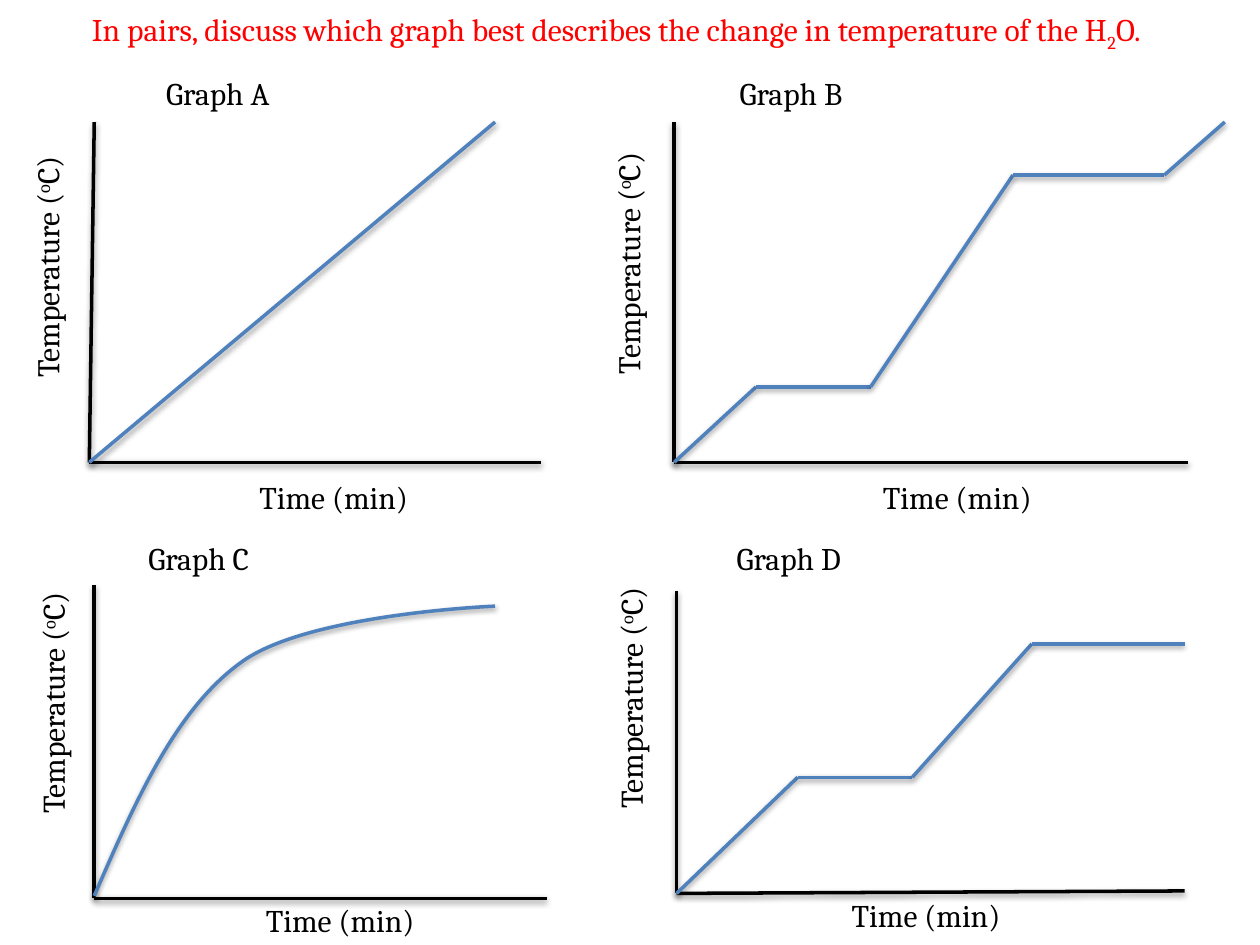
from lxml import etree
from pptx import Presentation
from pptx.dml.color import RGBColor
from pptx.enum import shapes, text
from pptx.oxml.ns import qn
from pptx.util import Cm, Pt

BLACK, RED, BLUE = "000000", "FF0000", "4F81BD"


def write(box, parts, color=BLACK):
    """Fill a box with (text, baseline percent) parts."""
    frame = box.text_frame
    look = {"word_wrap": True, "vertical_anchor": text.MSO_ANCHOR.TOP,
            "auto_size": text.MSO_AUTO_SIZE.SHAPE_TO_FIT_TEXT}
    for key, value in look.items():
        setattr(frame, key, value)
    para = frame.paragraphs[0]
    para.alignment = text.PP_ALIGN.LEFT
    for words, base in parts:
        run = para.add_run()
        run.text = words
        for key, value in {"size": Pt(18), "name": "Cambria"}.items():
            setattr(run.font, key, value)
        run.font.color.rgb = RGBColor.from_string(color)
        if base:
            run._r.get_or_add_rPr().set("baseline", str(base * 1000))


def draw(points, color):
    """Join the points, in cm, with straight lines in the theme's shadowed style."""
    for start, end in zip(points, points[1:]):
        line = slide.shapes.add_connector(
            shapes.MSO_CONNECTOR.STRAIGHT, *map(Cm, start + end))
        line.line.width = Pt(2)
        line.line.color.rgb = RGBColor.from_string(color)


deck = Presentation()
deck.slide_width, deck.slide_height = Cm(25.4), Cm(19.05)
slide = deck.slides.add_slide(deck.slide_layouts[5])

title = slide.shapes.title
spot = {"left": 1.6, "top": 0.08, "width": 26.62, "height": 1.02}
for key, value in spot.items():
    setattr(title, key, Cm(value))
write(title, [
    ("In pairs, discuss which graph best describes the change in "
     "temperature of the H", 0), ("2", -25), ("O.", 0)], RED)

# Each graph: corners of the text boxes, then the points of axes and curve
graphs = {
    "A": {"name": (3.1, 1.37), "temp": (-2.01, 4.39), "time": (4.98, 9.52),
          "axes": [(1.9, 2.46), (1.8, 9.32), (10.9, 9.32)],
          "curve": [(1.8, 9.32), (9.98, 2.46)]},
    "B": {"name": (14.66, 1.37), "temp": (9.7, 4.32), "time": (17.55, 9.52),
          "axes": [(13.59, 2.46), (13.59, 9.32), (23.95, 9.32)],
          "curve": [(13.59, 9.32), (15.24, 7.8), (17.55, 7.8),
                    (20.42, 3.53), (23.47, 3.53), (24.69, 2.46)]},
    "C": {"name": (2.74, 10.74), "temp": (-1.9, 13.18), "time": (5.11, 18.03),
          "axes": [(1.9, 11.79), (1.9, 18.11), (11.02, 18.11)],
          "curve": []},
    "D": {"name": (14.6, 10.74), "temp": (9.75, 13.08), "time": (16.92, 17.93),
          "axes": [(13.64, 11.91), (13.64, 18.01), (23.88, 17.96)],
          "curve": [(13.64, 18.01), (16.08, 15.67), (18.39, 15.67),
                    (20.8, 12.98), (23.88, 12.98)]},
}
for name, graph in graphs.items():
    draw(graph["axes"], BLACK)
    draw(graph["curve"], BLUE)
    labels = {
        "name": (4.47, 0, [(f"Graph {name}", 0)]),
        "temp": (5.92, 270, [("Temperature (", 0), ("o", 30), ("C)", 0)]),
        "time": (5.92, 0, [("Time (min)", 0)]),
    }
    for key, (width, turn, parts) in labels.items():
        box = slide.shapes.add_textbox(*map(Cm, graph[key] + (width, 1.02)))
        box.rotation = turn
        write(box, parts)

# Graph C bends: every three points after the first form one Bezier segment
bend = [(1.9, 18.06), (2.72, 16.18), (3.53, 14.3), (4.88, 13.34),
        (6.22, 12.37), (9.98, 12.22), (9.98, 12.22)]
first, *rest = [(Cm(x), Cm(y)) for x, y in bend]
pen = slide.shapes.build_freeform(*first)
pen.add_line_segments(rest, close=False)
curve = pen.convert_to_shape()
curve.fill.background()
curve.line.width = Pt(2)
curve.line.color.rgb = RGBColor.from_string(BLUE)
steps = list(curve._element.iter(qn("a:lnTo")))
track = steps[0].getparent()
for i in range(0, len(steps), 3):
    cubic = etree.SubElement(track, qn("a:cubicBezTo"))
    for step in steps[i:i + 3]:
        cubic.append(step[0])
        track.remove(step)
# The connectors use the theme's first effect, so the curve does too
next(curve._element.iter(qn("a:effectRef"))).set("idx", "1")

deck.save("out.pptx")
